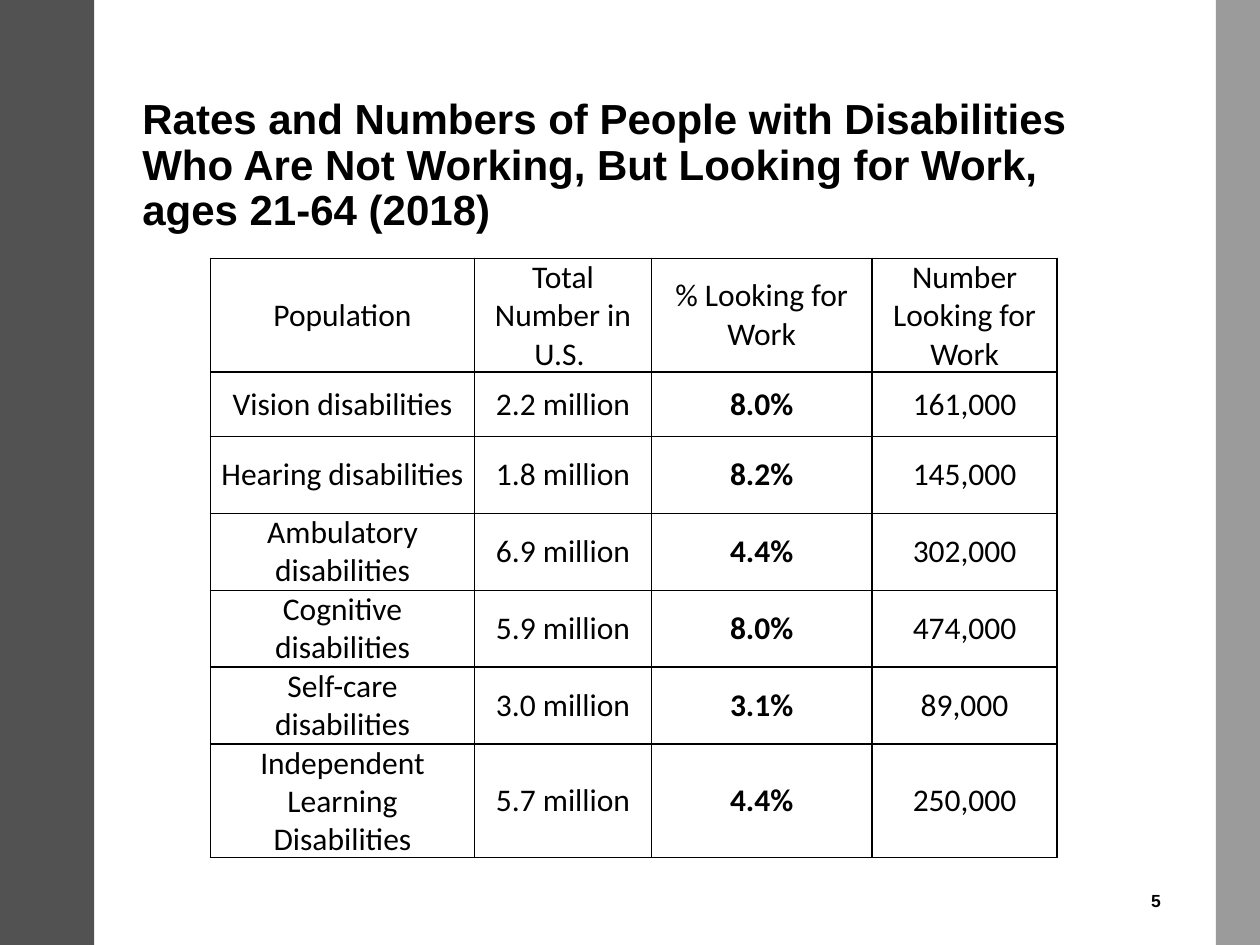
from dataclasses import dataclass

from lxml import etree
from pptx import Presentation, util as u
from pptx.dml.color import RGBColor
from pptx.enum import shapes, text
from pptx.oxml import ns


@dataclass(frozen=True)
class Theme:
    ink: str = "000000"
    left_band: str = "525252"
    right_band: str = "595959"
    heading_font: str = "Arial"
    table_font: str = "Calibri"
    title_size: int = 24
    table_size: int = 18
    number_size: int = 10
    border_width: int = 1


class SlideBuilder:
    def __init__(self, slide, theme):
        self.slide = slide
        self.theme = theme

    def style(self, paragraph, font_name, size, bold=False):
        font = paragraph.font
        font.name, font.size, font.bold = font_name, u.Pt(size), bold
        font.color.rgb = RGBColor.from_string(self.theme.ink)

    def band(self, left, width, color, opacity=100):
        shape = self.slide.shapes.add_shape(
            shapes.MSO_SHAPE.RECTANGLE, u.Cm(left), 0, u.Cm(width), u.Cm(19.05))
        shape.shadow.inherit = False
        shape.line.fill.background()
        shape.fill.solid()
        shape.fill.fore_color.rgb = RGBColor.from_string(color)
        if opacity < 100:
            color_node = shape.fill._xPr.find(".//" + ns.qn("a:srgbClr"))
            etree.SubElement(color_node, ns.qn("a:alpha"), val=str(opacity * 1000))

    def text_box(self, box, words, size, alignment, line_spacing=1.0, space_after=0):
        shape = self.slide.shapes.add_textbox(*(u.Cm(length) for length in box))
        frame = shape.text_frame
        frame.word_wrap = True
        frame.vertical_anchor = text.MSO_ANCHOR.MIDDLE
        paragraph = frame.paragraphs[0]
        paragraph.text = words
        paragraph.alignment = alignment
        paragraph.line_spacing = line_spacing
        paragraph.space_after = u.Pt(space_after)
        self.style(paragraph, self.theme.heading_font, size, bold=True)

    def borders(self, cell):
        properties = cell._tc.get_or_add_tcPr()
        for index, side in enumerate(("lnL", "lnR", "lnT", "lnB")):
            line = etree.Element(
                ns.qn(f"a:{side}"), w=str(u.Pt(self.theme.border_width)))
            fill = etree.SubElement(line, ns.qn("a:solidFill"))
            etree.SubElement(fill, ns.qn("a:srgbClr"), val=self.theme.ink)
            properties.insert(index, line)

    def cell(self, cell, words, bold, space_after):
        cell.fill.background()
        cell.vertical_anchor = text.MSO_ANCHOR.MIDDLE
        cell.margin_left = cell.margin_right = u.Cm(0.18)
        cell.margin_top = cell.margin_bottom = 0
        paragraph = cell.text_frame.paragraphs[0]
        paragraph.text = words
        paragraph.alignment = text.PP_ALIGN.CENTER
        paragraph.space_after = u.Pt(space_after)
        self.style(paragraph, self.theme.table_font, self.theme.table_size, bold)
        self.borders(cell)

    def table(self, left, top, widths, heights, rows, bold_column):
        table = self.slide.shapes.add_table(
            len(rows), len(widths), u.Cm(left), u.Cm(top),
            u.Cm(sum(widths)), u.Cm(sum(heights))).table
        table.first_row = table.horz_banding = False
        for column, width in zip(table.columns, widths):
            column.width = u.Cm(width)
        for row_index, (row, height) in enumerate(zip(rows, heights)):
            table.rows[row_index].height = u.Cm(height)
            for column_index, words in enumerate(row):
                is_body = row_index > 0
                self.cell(table.cell(row_index, column_index), words,
                          bold=is_body and column_index == bold_column,
                          space_after=9 if is_body else 6)


POPULATION_ROWS = [
    ("Population", "Total Number in U.S. ", "% Looking for Work", "Number Looking for Work"),
    ("Vision disabilities", "2.2 million", "8.0%", "161,000"),
    ("Hearing disabilities", "1.8 million", "8.2%", "145,000"),
    ("Ambulatory disabilities", "6.9 million", "4.4%", "302,000"),
    ("Cognitive disabilities", "5.9 million", "8.0%", "474,000"),
    ("Self-care disabilities", "3.0 million", "3.1%", "89,000"),
    ("Independent Learning Disabilities", "5.7 million", "4.4%", "250,000"),
]


def main():
    presentation = Presentation()
    presentation.slide_width, presentation.slide_height = u.Cm(25.4), u.Cm(19.05)
    theme = Theme()
    builder = SlideBuilder(
        presentation.slides.add_slide(presentation.slide_layouts[6]), theme)

    builder.text_box(
        (2.62, 1.52, 20.55, 3.68),
        "Rates and Numbers of People with Disabilities Who Are Not Working, "
        "But Looking for Work, ages 21-64 (2018)",
        theme.title_size, text.PP_ALIGN.LEFT, line_spacing=0.9)
    builder.band(0, 1.9, theme.left_band)
    builder.text_box((17.93, 17.65, 5.72, 1.02), "5", theme.number_size,
                     text.PP_ALIGN.RIGHT, space_after=6)
    builder.band(24.51, 0.97, theme.right_band, opacity=60)
    builder.table(4.24, 5.21, widths=[5.33, 3.56, 4.45, 3.73],
                  heights=[2.29, 1.3] + [1.55] * 4 + [2.29],
                  rows=POPULATION_ROWS, bold_column=2)
    presentation.save("out.pptx")


if __name__ == "__main__":
    main()
